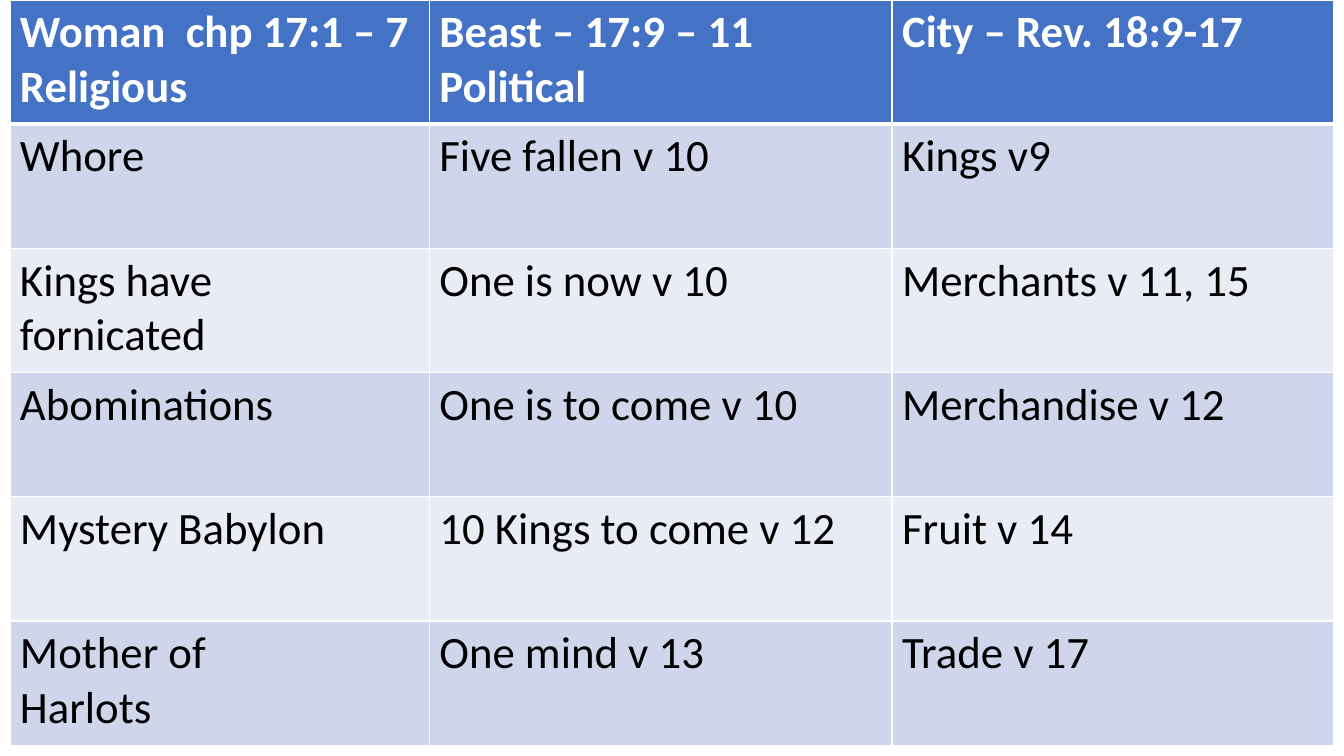
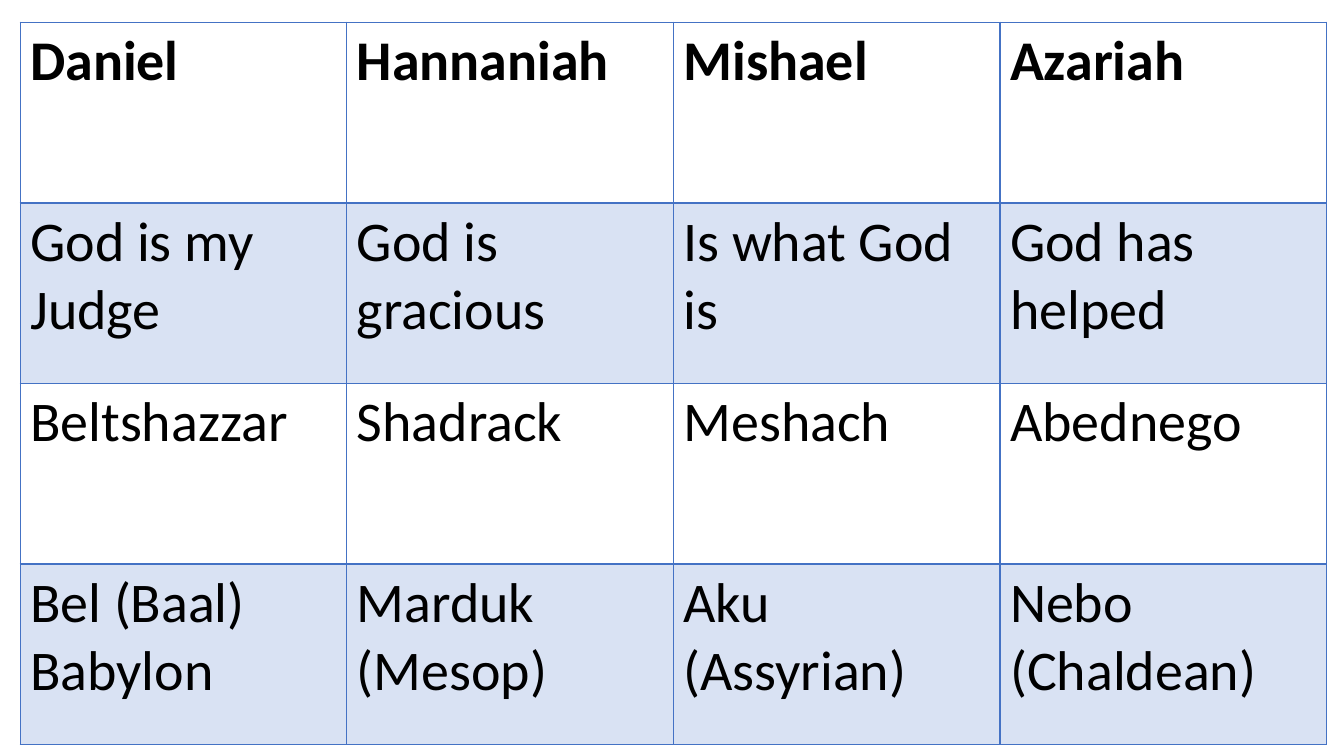
from lxml import etree
from pptx import Presentation
from pptx.dml.color import RGBColor
from pptx.oxml.ns import qn
from pptx.util import Cm, Pt

COLORS = {
    "blue": "4472C4",
    "white": "FFFFFF",
    "black": "000000",
    "band": "CFD5EA",
    "pale": "E9EBF5",
}
FONT = "Calibri"
BLANK = 6

BABYLON = [
    ["Woman  chp 17:1 – 7\nReligious", "Beast – 17:9 – 11\nPolitical", "City – Rev. 18:9-17"],
    ["Whore", "Five fallen v 10", "Kings v9"],
    ["Kings have\nfornicated", "One is now v 10", "Merchants v 11, 15"],
    ["Abominations", "One is to come v 10", "Merchandise v 12"],
    ["Mystery Babylon", "10 Kings to come v 12", "Fruit v 14"],
    ["Mother of\nHarlots", "One mind v 13", "Trade v 17"],
]
NAMES = [
    ["Daniel", "Hannaniah", "Mishael", "Azariah"],
    ["God is my Judge", "God is gracious", "Is what God is", "God has helped"],
    ["Beltshazzar", "Shadrack", "Meshach", "Abednego"],
    ["Bel (Baal) Babylon", "Marduk (Mesop)", "Aku (Assyrian)", "Nebo (Chaldean)"],
]


class Deck:
    def __init__(self):
        self.prs = Presentation()
        self.prs.slide_width = Cm(33.87)
        self.prs.slide_height = Cm(19.05)
        self.slide = None

    def page(self):
        self.slide = self.prs.slides.add_slide(self.prs.slide_layouts[BLANK])

    def label(self, cell, text, size, color, bold):
        frame = cell.text_frame
        for i, line in enumerate(text.split("\n")):
            para = frame.add_paragraph() if i else frame.paragraphs[0]
            run = para.add_run()
            run.text = line
            font = run.font
            font.name, font.size, font.bold = FONT, Pt(size), bold
            font.color.rgb = RGBColor.from_string(COLORS[color])

    def edge(self, cell, side, color, width):
        props = cell._tc.get_or_add_tcPr()
        line = etree.SubElement(props, qn("a:ln" + side), w=str(Pt(width)))
        solid = etree.SubElement(line, qn("a:solidFill"))
        etree.SubElement(solid, qn("a:srgbClr"), val=COLORS[color])

    def paint(self, cell, color, alpha=100):
        """Fill a cell; no colour leaves it clear, alpha is opacity in percent."""
        if not color:
            cell.fill.background()
            return
        cell.fill.solid()
        cell.fill.fore_color.rgb = RGBColor.from_string(COLORS[color])
        if alpha < 100:
            solid = cell._tc.tcPr.find(qn("a:solidFill"))
            tint = solid.find(qn("a:srgbClr"))
            etree.SubElement(tint, qn("a:alpha"), val=str(alpha * 1000))

    def table(self, rows, left, top, widths, height, size, head, bands, line, rule):
        """Draw a table; head is (text, fill), bands are (fill, alpha) by turns,
        rule is the line width below the head."""
        shape = self.slide.shapes.add_table(
            len(rows), len(widths), Cm(left), Cm(top),
            Cm(sum(widths)), Cm(height * len(rows)))
        grid = shape.table
        grid.first_row = grid.horz_banding = False
        for col, width in zip(grid.columns, widths):
            col.width = Cm(width)
        for r, texts in enumerate(rows):
            grid.rows[r].height = Cm(height)
            first = r == 0
            ink, fill = head if first else ("black", None)
            shade = (fill, 100) if first else bands[(r - 1) % len(bands)]
            edges = {"L": 1, "R": 1, "T": rule if r == 1 else 1, "B": rule if first else 1}
            for c, text in enumerate(texts):
                cell = grid.cell(r, c)
                self.label(cell, text, size, ink, first)
                for side, width in edges.items():
                    self.edge(cell, side, line, width)
                self.paint(cell, *shade)


def main():
    deck = Deck()
    deck.page()
    deck.table(BABYLON, 0.25, 0, [10.57, 11.66, 11.13], 3.13, 32,
               ("white", "blue"), [("band", 100), ("pale", 100)], "white", 3)
    deck.page()
    deck.table(NAMES, 0.51, 0.56, [8.23] * 4, 4.55, 40,
               ("black", None), [("blue", 20), (None, 100)], "blue", 2)
    deck.prs.save("out.pptx")


if __name__ == "__main__":
    main()
